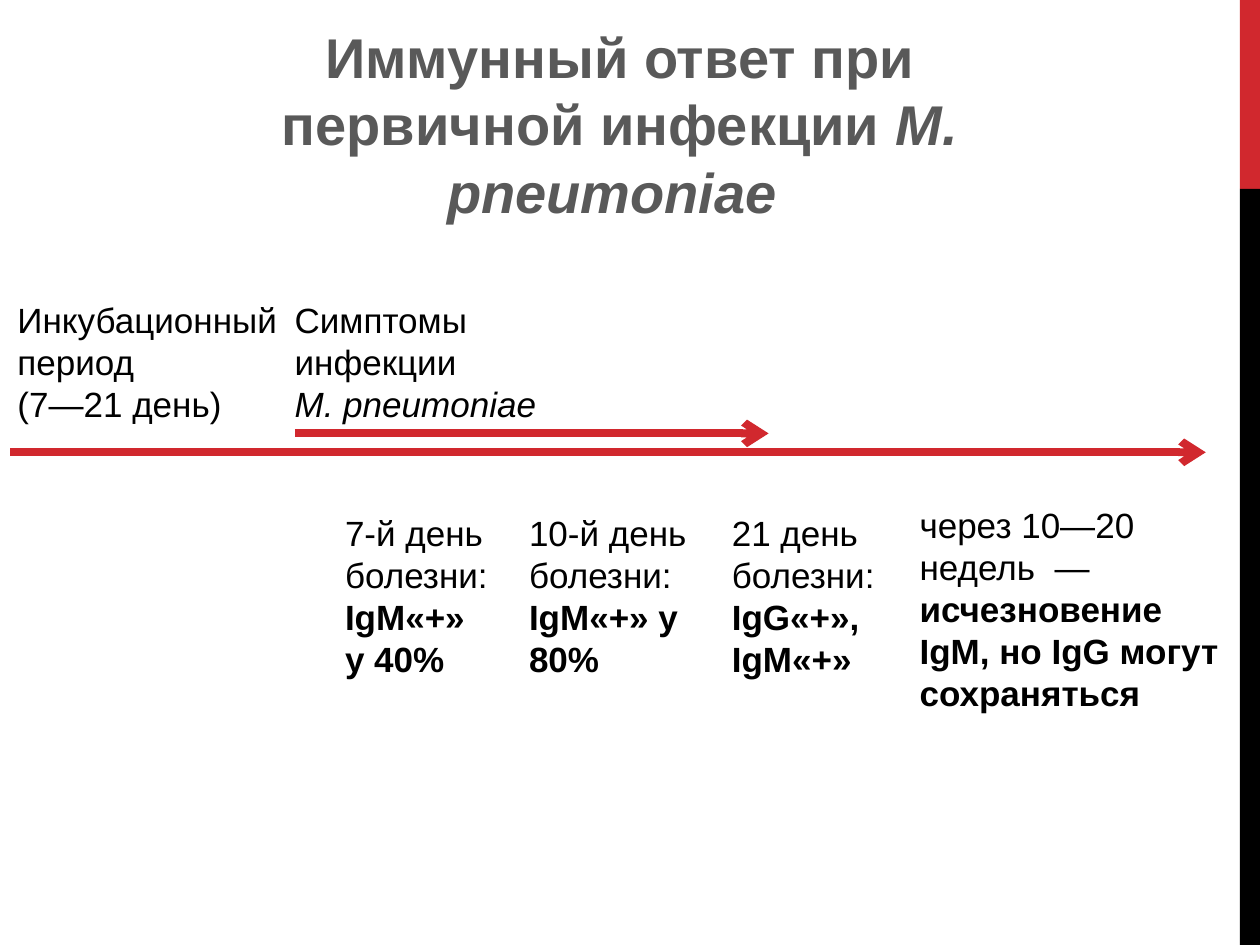
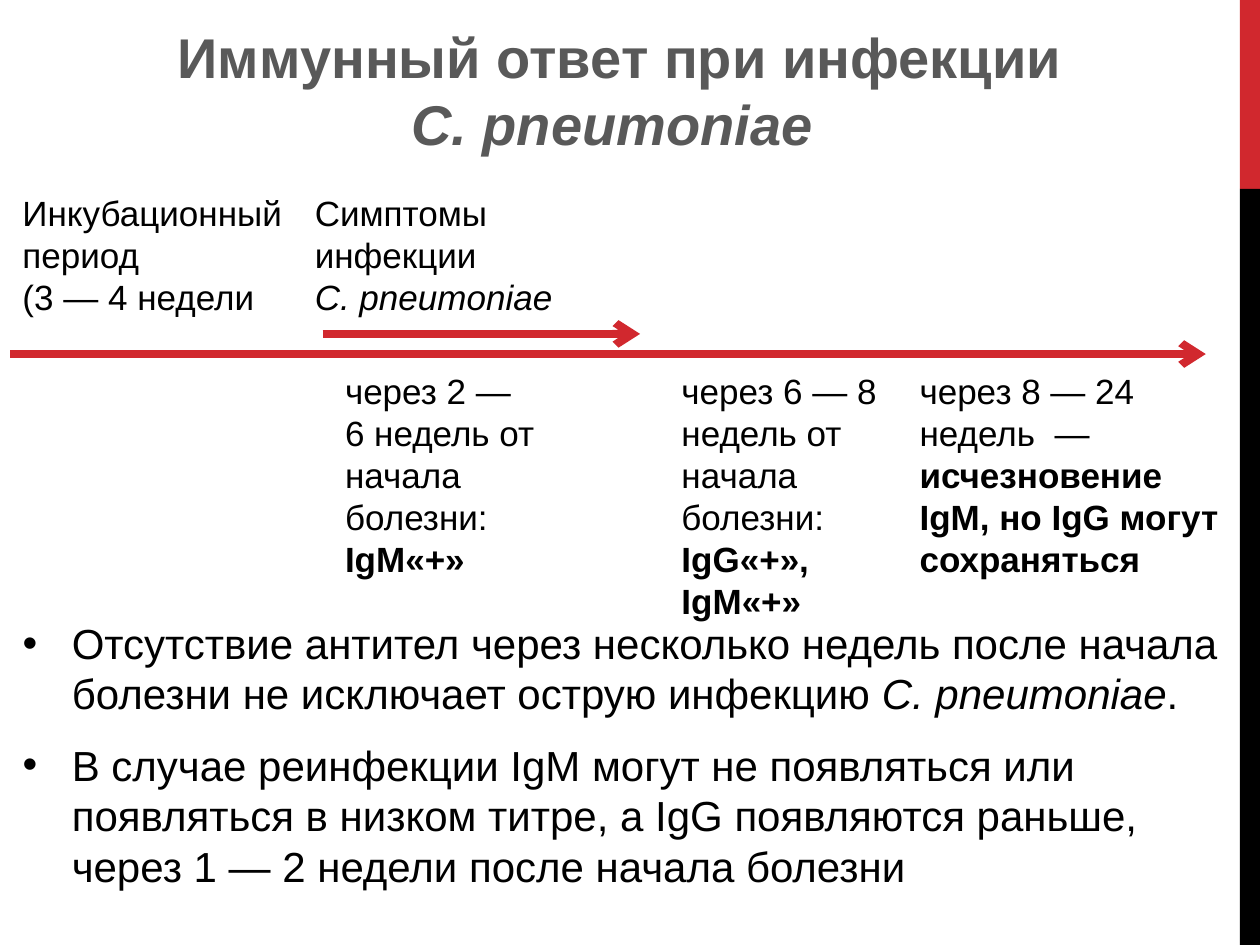
from lxml import etree
from pptx import Presentation
from pptx.dml.color import RGBColor
from pptx.enum import shapes, text
from pptx.oxml import ns
from pptx.util import Inches, Pt

COLORS = {"accent": "D1282E", "band": "000000", "title": "595959", "text": "000000"}
FONT = "Arial"
TITLE_BOX = (1.22, 0.13, 7.4, 1.18)
AXIS = (0.08, 9.57)


def color(name):
    return RGBColor.from_string(COLORS[name])


def write_text(shape, paragraphs, size=20, tone="text", bold=False,
               align=text.PP_ALIGN.LEFT, before=0, hanging=None):
    frame = shape.text_frame
    frame.word_wrap = True
    frame.auto_size = text.MSO_AUTO_SIZE.NONE
    frame.vertical_anchor = text.MSO_ANCHOR.TOP
    for index, runs in enumerate(paragraphs):
        paragraph = frame.add_paragraph() if index else frame.paragraphs[0]
        paragraph.alignment = align
        paragraph.space_before = Pt(before)
        if hanging:
            add_bullet(paragraph, *hanging)
        for content, style in runs:
            run = paragraph.add_run()
            run.text = content
            run.font.name = FONT
            run.font.size = Pt(size)
            run.font.bold = bold or style == "bold"
            run.font.italic = style == "italic"
            run.font.color.rgb = color(tone)


def add_bullet(paragraph, margin, indent):
    properties = paragraph._p.get_or_add_pPr()
    properties.set("marL", str(Inches(margin)))
    properties.set("indent", str(Inches(indent)))
    etree.SubElement(properties, ns.qn("a:buFont")).set("typeface", FONT)
    etree.SubElement(properties, ns.qn("a:buChar")).set("char", "•")


def place(shape, box):
    shape.left, shape.top, shape.width, shape.height = map(Inches, box)


def add_label(slide, box, *paragraphs):
    write_text(slide.shapes.add_textbox(*map(Inches, box)), paragraphs)


def add_arrow(slide, start, end, y):
    arrow = slide.shapes.add_connector(
        shapes.MSO_CONNECTOR.STRAIGHT, Inches(start), Inches(y), Inches(end), Inches(y))
    arrow.line.color.rgb = color("accent")
    arrow.line.width = Pt(4.5)
    line = arrow.line._get_or_add_ln()
    etree.SubElement(line, ns.qn("a:tailEnd")).set("type", "arrow")
    etree.SubElement(arrow._element.spPr, ns.qn("a:effectLst"))


def add_side_bands(presentation, slide):
    master_tree = presentation.slide_master.shapes._spTree
    for name, top, height in (("accent", 0, 1.5), ("band", 1.5, 6)):
        band = slide.shapes.add_shape(
            shapes.MSO_SHAPE.RECTANGLE, *map(Inches, (9.84, top, 0.16, height)))
        band.shadow.inherit = False
        band.fill.solid()
        band.fill.fore_color.rgb = color(name)
        band.line.fill.background()
        master_tree.append(band._element)


def add_title(slide, heading, species):
    title = slide.shapes.title
    place(title, TITLE_BOX)
    write_text(title, [[(heading, ""), (species, "italic")]], size=32, tone="title",
               bold=True, align=text.PP_ALIGN.CENTER)


def add_phases(slide, top, incubation, symptoms, species):
    left, period = incubation
    add_label(slide, (left, top, 2.4, 1.11),
              [("Инкубационный период", "")], [(period, "")])
    left, width = symptoms
    add_label(slide, (left, top, width, 1.11),
              [("Симптомы инфекции", "")], [(species, "italic")])


def add_timeline(slide, y, symptom_start, symptom_end, gap):
    add_arrow(slide, *AXIS, y)
    add_arrow(slide, symptom_start, symptom_end, y - gap)


def add_stages(slide, top, height, stages):
    for left, width, time, finding in stages:
        add_label(slide, (left, top, width, height), [(time, ""), (finding, "bold")])


def add_fading_stage(slide, top, weeks):
    add_stages(slide, top, 1.78, [
        (7.2, 2.6, f"через {weeks} недель  — ",
         "исчезновение IgM, но IgG могут сохраняться")])


def add_notes_list(slide, box, items):
    body = slide.placeholders[1]
    place(body, box)
    write_text(body, items, size=24, before=12, hanging=(0.39, -0.5))


def build_mycoplasma(slide):
    add_title(slide, "Иммунный ответ при первичной инфекции ", "M. pneumoniae ")
    add_timeline(slide, 3.59, 2.34, 6.1, 0.15)
    add_phases(slide, 2.32, (0.04, "(7―21 день)"), (2.24, 2.2), "M. pneumoniae")
    add_stages(slide, 4.01, 1.45, [
        (2.64, 1.37, "7-й день болезни: ", "IgM«+» у 40%"),
        (4.1, 1.61, "10-й день болезни: ", "IgM«+» у 80%"),
        (5.71, 1.65, "21 день болезни: ", "IgG«+», IgM«+»")])
    add_fading_stage(slide, 3.95, "10—20")


def build_chlamydia(slide):
    species = "С. pneumoniae"
    add_title(slide, "Иммунный ответ при инфекции ", species + " ")
    add_timeline(slide, 2.81, 2.56, 5.08, 0.16)
    add_phases(slide, 1.47, (0.08, "(3 — 4 недели"), (2.4, 2.13), species)
    add_stages(slide, 2.88, 2.12, [
        (2.64, 1.73, "через 2 — 6 недель от начала болезни: ", "IgM«+»"),
        (5.31, 2.05, "через 6 — 8 недель от начала болезни: ", "IgG«+», IgM«+»")])
    add_fading_stage(slide, 2.88, "8 — 24")
    add_notes_list(slide, (0.08, 4.85, 9.72, 2.69), [
        [("Отсутствие антител через несколько недель после начала болезни "
          "не исключает острую инфекцию ", ""), (species, "italic"), (".", "")],
        [("В случае реинфекции IgM могут не появляться или появляться в низком титре, "
          "а IgG появляются раньше, через 1 — 2 недели после начала болезни", "")]])


def main():
    presentation = Presentation()
    presentation.slide_width = Inches(10)
    presentation.slide_height = Inches(7.5)
    title_only = presentation.slide_layouts[5]
    title_and_list = presentation.slide_layouts[1]
    first = presentation.slides.add_slide(title_only)
    add_side_bands(presentation, first)
    build_mycoplasma(first)
    build_chlamydia(presentation.slides.add_slide(title_and_list))
    presentation.save("out.pptx")


if __name__ == "__main__":
    main()
